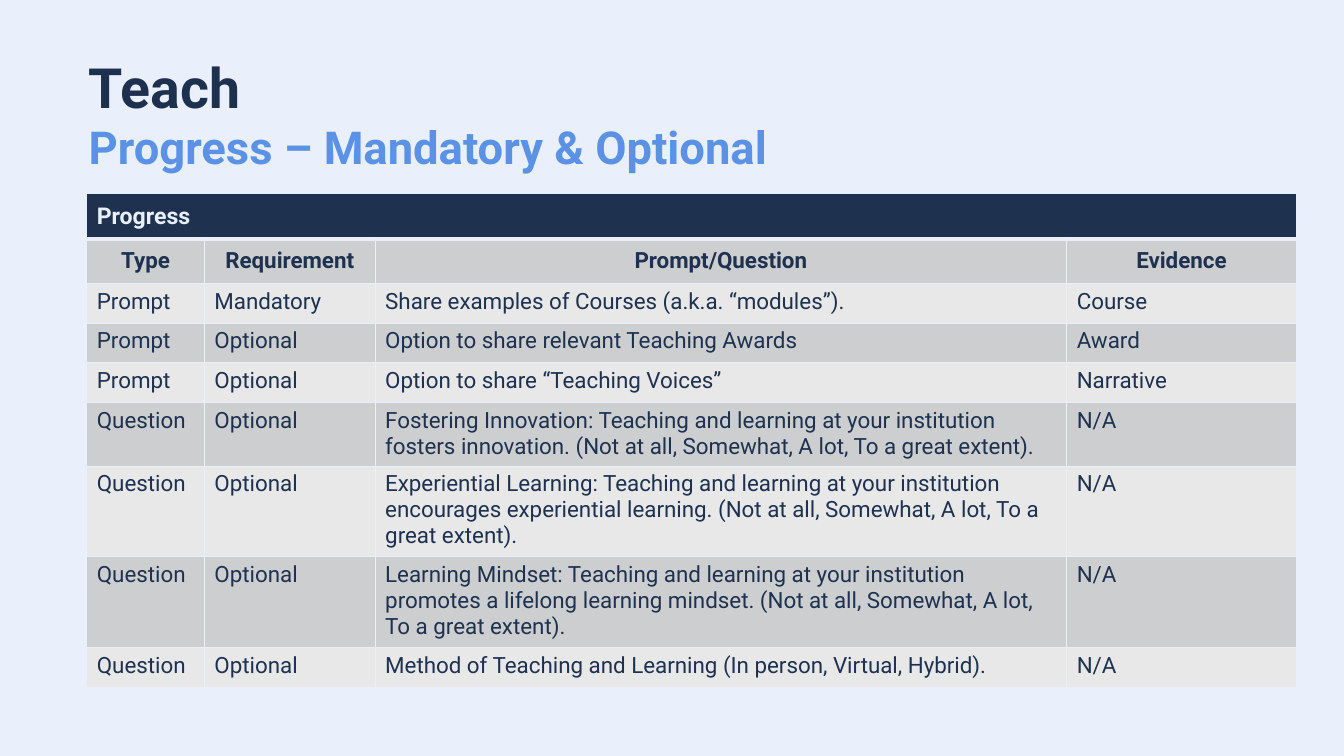
from lxml import etree
from pptx import Presentation
from pptx.dml.color import RGBColor
from pptx.enum.text import MSO_ANCHOR, PP_ALIGN
from pptx.oxml.ns import qn
from pptx.util import Pt

CENTER = PP_ALIGN.CENTER
LEFT = PP_ALIGN.LEFT
MIDDLE = MSO_ANCHOR.MIDDLE
TOP = MSO_ANCHOR.TOP

PALE = RGBColor(0xE9, 0xF0, 0xFC)
NAVY = RGBColor(0x1E, 0x32, 0x50)
INK = RGBColor(0x1D, 0x31, 0x4F)
BLUE = RGBColor(0x5B, 0x92, 0xE5)
DARK = RGBColor(0xCD, 0xCE, 0xD0)
LIGHT = RGBColor(0xE8, 0xE8, 0xE9)

SCALE = "(Not at all, Somewhat, A lot, To a great extent)."
LEARN = "Teaching and learning at your institution"
HEADS = ["Type", "Requirement", "Prompt/Question", "Evidence"]
ROWS = [
    ("Prompt", "Mandatory", "Share examples of Courses (a.k.a. “modules”).", "Course"),
    ("Prompt", "Optional", "Option to share relevant Teaching Awards", "Award"),
    ("Prompt", "Optional", "Option to share “Teaching Voices”", "Narrative"),
    ("Question", "Optional", f"Fostering Innovation: {LEARN} fosters innovation. {SCALE}", "N/A"),
    ("Question", "Optional",
     f"Experiential Learning: {LEARN} encourages experiential learning. {SCALE}", "N/A"),
    ("Question", "Optional",
     f"Learning Mindset: {LEARN} promotes a lifelong learning mindset. {SCALE}", "N/A"),
    ("Question", "Optional",
     "Method of Teaching and Learning (In person, Virtual, Hybrid).", "N/A"),
]
WIDTHS = [84, 122, 494, 164]
HEIGHTS = [32, 32, 28.4, 28.4, 28.4, 45.4, 64.8, 64.8, 28.4]


class Deck:
    font = "Roboto"

    def __init__(self):
        self.file = Presentation()
        self.file.slide_width = Pt(960)
        self.file.slide_height = Pt(540)
        self.slide = self.file.slides.add_slide(self.file.slide_layouts[6])
        fill = self.slide.background.fill
        fill.solid()
        fill.fore_color.rgb = PALE

    def style(self, run, size, color, bold):
        run.font.name = self.font
        run.font.size = Pt(size)
        run.font.color.rgb = color
        run.font.bold = bold

    def title(self, x, y, w, h, lines):
        box = self.slide.shapes.add_textbox(Pt(x), Pt(y), Pt(w), Pt(h))
        frame = box.text_frame
        frame.word_wrap = True
        frame.margin_left = frame.margin_right = Pt(9.4)
        frame.margin_top = Pt(12.5)
        frame.margin_bottom = 0
        frame.text = "\v".join(text for text, size, color in lines)
        for run, (text, size, color) in zip(frame.paragraphs[0].runs, lines):
            self.style(run, size, color, True)

    def border(self, cell, top, bottom):
        props = cell._tc.get_or_add_tcPr()
        sides = [("L", 1), ("R", 1), ("T", top), ("B", bottom)]
        for spot, (side, width) in enumerate(sides):
            line = etree.Element(qn(f"a:ln{side}"), w=str(Pt(width)))
            solid = etree.SubElement(line, qn("a:solidFill"))
            etree.SubElement(solid, qn("a:srgbClr"), val=str(PALE))
            props.insert(spot, line)

    def cell(self, cell, text, fill, size=16, color=NAVY, bold=False,
             align=LEFT, anchor=TOP, top=1, bottom=1):
        cell.fill.solid()
        cell.fill.fore_color.rgb = fill
        cell.vertical_anchor = anchor
        self.border(cell, top, bottom)
        cell.text_frame.text = text
        para = cell.text_frame.paragraphs[0]
        para.alignment = align
        for run in para.runs:
            self.style(run, size, color, bold)

    def table(self, x, y, name, heads, rows, widths, heights):
        table = self.slide.shapes.add_table(
            len(heights), len(widths), Pt(x), Pt(y),
            Pt(sum(widths)), Pt(sum(heights))).table
        for col, width in zip(table.columns, widths):
            col.width = Pt(width)
        for row, height in zip(table.rows, heights):
            row.height = Pt(height)
        table.cell(0, 0).merge(table.cell(0, len(widths) - 1))
        for c, head in enumerate(heads):
            self.cell(table.cell(0, c), "" if c else name, NAVY, 16.5, PALE,
                      True, anchor=MIDDLE, bottom=3)
            self.cell(table.cell(1, c), head, DARK, bold=True,
                      align=CENTER, anchor=MIDDLE, top=3)
        for r, row in enumerate(rows, 2):
            for c, text in enumerate(row):
                self.cell(table.cell(r, c), text, DARK if r % 2 else LIGHT)


def main():
    deck = Deck()
    deck.table(62, 138.5, "Progress", HEADS, ROWS, WIDTHS, HEIGHTS)
    deck.title(54, 25.2, 834, 100, [
        ("Teach", 39.6, INK),
        ("Progress – Mandatory & Optional", 32.4, BLUE),
    ])
    deck.file.save("out.pptx")


if __name__ == "__main__":
    main()
